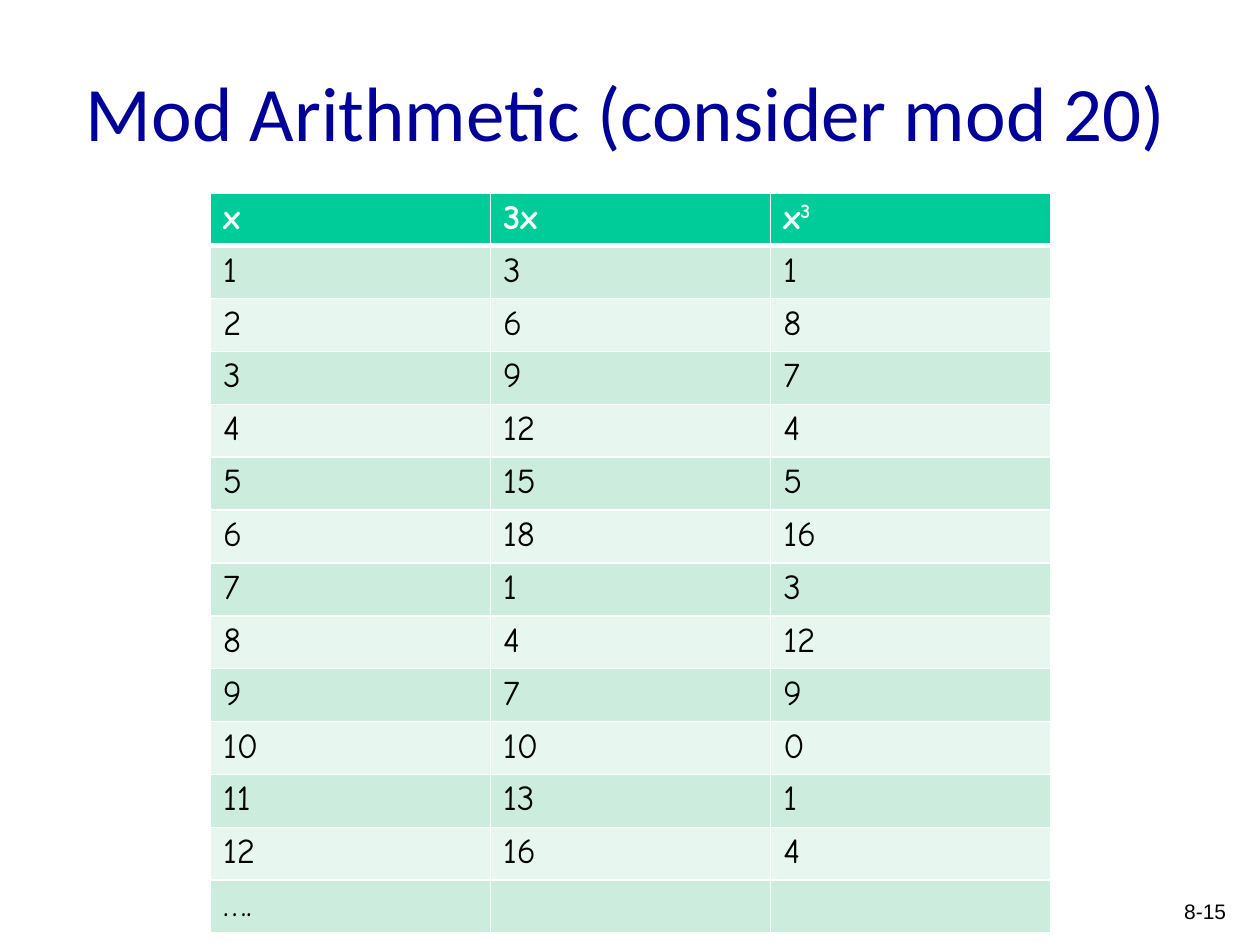
from lxml import etree
from pptx import Presentation
from pptx.dml.color import RGBColor
from pptx.enum.text import MSO_ANCHOR, PP_ALIGN
from pptx.oxml.ns import qn
from pptx.util import Inches, Pt

LEFT, RIGHT = PP_ALIGN.LEFT, PP_ALIGN.RIGHT
MIDDLE = MSO_ANCHOR.MIDDLE
TITLE_ONLY = 5

COLORS = {
    "title": "000099",
    "text": "000000",
    "header": "00CC99",
    "band_dark": "CCECDE",
    "band_light": "E7F6EF",
    "white": "FFFFFF",
}

HEADER = ["x", "3x", "x"]
EXPONENT = "3"
TRIPLES = [3, 6, 9, 12, 15, 18, 1, 4, 7, 10, 13, 16]
CUBES = [1, 8, 7, 4, 5, 16, 3, 12, 9, 0, 1, 4]
ROWS = [HEADER, *zip(range(1, 13), TRIPLES, CUBES), ("….", "", "")]


def style_font(font, name, size, color, bold=False):
    font.name = name
    font.size = Pt(size)
    font.bold = bold
    font.color.rgb = RGBColor.from_string(COLORS[color])


def add_title(page, text):
    title = page.shapes.title
    title.left, title.top = Inches(0.58), Inches(0.25)
    title.width, title.height = Inches(9.01), Inches(1.25)
    frame = title.text_frame
    frame.text = text
    frame.vertical_anchor = MIDDLE
    para = frame.paragraphs[0]
    para.alignment = LEFT
    style_font(para.font, "Calibri", 44, "title")


def add_page_number(page, text):
    box = page.shapes.add_textbox(
        Inches(9.09), Inches(7.08), Inches(0.74), Inches(0.33))
    box.text_frame.word_wrap = True
    para = box.text_frame.paragraphs[0]
    para.text = text
    para.alignment = RIGHT
    style_font(para.font, "Arial", 12, "text")


def set_borders(cell, top, bottom):
    """Draw white cell borders; top and bottom are widths in points."""
    properties = cell._tc.get_or_add_tcPr()
    widths = {"a:lnL": 1, "a:lnR": 1, "a:lnT": top, "a:lnB": bottom}
    for tag, width in widths.items():
        line = etree.SubElement(properties, qn(tag), w=str(Pt(width)))
        fill = etree.SubElement(line, qn("a:solidFill"))
        etree.SubElement(fill, qn("a:srgbClr"), val=COLORS["white"])


def fill_cell(cell, text, row):
    is_header = row == 0
    set_borders(cell, top=3 if row == 1 else 1, bottom=3 if is_header else 1)
    band = "band_dark" if row % 2 else "band_light"
    cell.fill.solid()
    cell.fill.fore_color.rgb = RGBColor.from_string(
        COLORS["header" if is_header else band])
    cell.margin_top = cell.margin_bottom = Inches(0.04)
    para = cell.text_frame.paragraphs[0]
    para.text = str(text)
    style_font(para.font, "Comic Neue", 20,
               "white" if is_header else "text", is_header)


def add_superscript(cell, text):
    span = cell.text_frame.paragraphs[0].add_run()
    span.text = text
    span.font._element.set("baseline", "30000")


def add_mod_table(page):
    row_height = Inches(0.42)
    table = page.shapes.add_table(
        len(ROWS), len(HEADER), Inches(1.67), Inches(1.53),
        Inches(6.67), row_height * len(ROWS)).table
    for row, values in enumerate(ROWS):
        table.rows[row].height = row_height
        for column, value in enumerate(values):
            fill_cell(table.cell(row, column), value, row)
    add_superscript(table.cell(0, 2), EXPONENT)


def main():
    deck = Presentation()
    deck.slide_width, deck.slide_height = Inches(10), Inches(7.5)
    page = deck.slides.add_slide(deck.slide_layouts[TITLE_ONLY])
    add_page_number(page, "8-15")
    add_title(page, "Mod Arithmetic (consider mod 20)")
    add_mod_table(page)
    deck.save("out.pptx")


if __name__ == "__main__":
    main()
